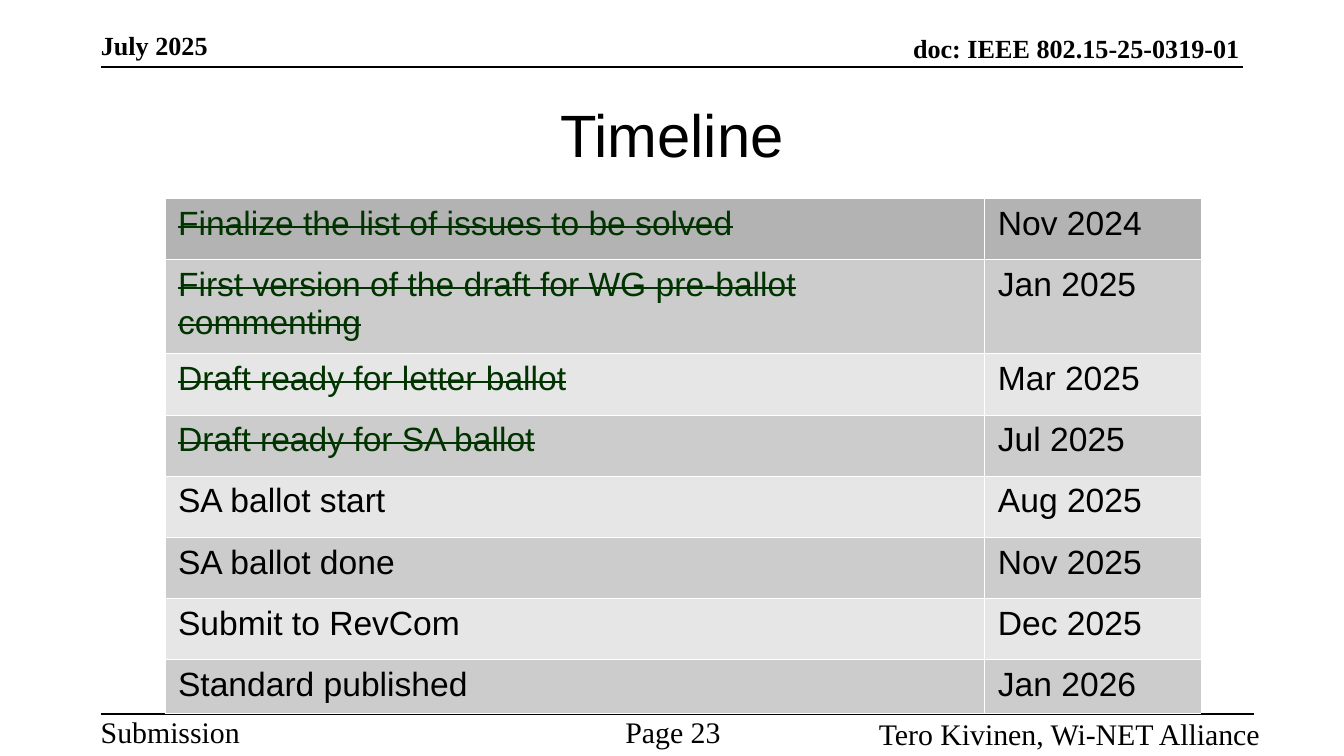
from copy import deepcopy
from lxml.etree import SubElement
from pptx import Presentation
from pptx.dml.color import RGBColor
from pptx.enum.shapes import MSO_CONNECTOR
from pptx.enum.text import MSO_ANCHOR, PP_ALIGN
from pptx.oxml.ns import qn
from pptx.util import Pt

PX = 4572  # 200 px to the inch
BLACK = RGBColor(0, 0, 0)
WHITE = RGBColor(0xFF, 0xFF, 0xFF)
GREEN = RGBColor(0, 0x33, 0)
HEAD = RGBColor(0xB3, 0xB3, 0xB3)
DARK = RGBColor(0xCC, 0xCC, 0xCC)
LIGHT = RGBColor(0xE6, 0xE6, 0xE6)
LEFT, MID, RIGHT = PP_ALIGN.LEFT, PP_ALIGN.CENTER, PP_ALIGN.RIGHT
TOP, CENTER, LOW = MSO_ANCHOR.TOP, MSO_ANCHOR.MIDDLE, MSO_ANCHOR.BOTTOM


def write(frame, text, color, form):
    """Add a run and give the paragraph end the same font."""
    para = frame.paragraphs[0]
    run = para.add_run()
    run.text = text
    run.font.color.rgb = color
    for key, value in form.items():
        setattr(run.font, key, value)
    end = deepcopy(run.font._element)
    end.tag = qn("a:endParaRPr")
    para._p.append(end)
    return run


def border(cell):
    """Draw a white hairline on all four sides of a cell."""
    props = cell._tc.get_or_add_tcPr()
    for i, side in enumerate(("lnL", "lnR", "lnT", "lnB")):
        line = SubElement(props, qn("a:" + side), w="762")
        fill = SubElement(line, qn("a:solidFill"))
        SubElement(fill, qn("a:srgbClr"), val=str(WHITE))
        props.remove(line)
        props.insert(i, line)


deck = Presentation()
deck.slide_width, deck.slide_height = 2000 * PX, 1125 * PX
slide = deck.slides.add_slide(deck.slide_layouts[6])
shapes = slide.shapes

# Rules above and below the content
for y, end in ((100, 1850), (1063, 1866)):
    rule = shapes.add_connector(
        MSO_CONNECTOR.STRAIGHT, 150 * PX, y * PX, end * PX, y * PX)
    rule.line.color.rgb = BLACK
    rule.line.width = Pt(1)
    SubElement(rule._element.spPr, qn("a:effectLst"))

# Header, footer and title
header = {"name": "Times New Roman", "size": Pt(14), "bold": True}
footer = {"name": "Times New Roman", "size": Pt(16)}
title = {"name": "Arial", "size": Pt(32)}
labels = (
    ("July 2025", (150, 60, 558, 30), LEFT, LOW, header),
    ("doc: IEEE 802.15-25-0319-01", (677, 65, 1168, 30), RIGHT, LOW, header),
    ("Submission", (150, 1062, 374, 46), LEFT, TOP, footer),
    ("Page 23 ", (820, 1062, 374, 46), MID, TOP, footer),
    ("Tero Kivinen, Wi-NET Alliance", (1141, 1065, 734, 46), RIGHT, TOP,
     footer),
    ("Timeline", (100, 96, 1800, 206), MID, CENTER, title),
)
for text, place, align, anchor, form in labels:
    frame = shapes.add_textbox(*(n * PX for n in place)).text_frame
    layout = {"word_wrap": True, "vertical_anchor": anchor, "margin_left": 0,
              "margin_right": 0, "margin_top": 0, "margin_bottom": 0}
    for key, value in layout.items():
        setattr(frame, key, value)
    frame.paragraphs[0].alignment = align
    write(frame, text, BLACK, form)

# Timeline table: finished steps are green and struck through
steps = (
    ("Finalize the list of issues to be solved", "Nov 2024", 91),
    ("First version of the draft for WG pre-ballot commenting", "Jan 2025",
     131),
    ("Draft ready for letter ballot", "Mar 2025", 91),
    ("Draft ready for SA ballot", "Jul 2025", 91),
    ("SA ballot start", "Aug 2025", 91),
    ("SA ballot done", "Nov 2025", 91),
    ("Submit to RevCom", "Dec 2025", 91),
    ("Standard published", "Jan 2026", 76),
)
DONE = 4
body = {"name": "Arial", "size": Pt(18)}
table = shapes.add_table(
    len(steps), 2, 245 * PX, 295 * PX, 1542 * PX, 753 * PX).table
table.first_row = table.horz_banding = False
for column, width in zip(table.columns, (1220, 322)):
    column.width = width * PX

for r, (step, date, height) in enumerate(steps):
    table.rows[r].height = height * PX
    shade = HEAD if r == 0 else (LIGHT, DARK)[r % 2]
    for c, text in enumerate((step, date)):
        cell = table.cell(r, c)
        cell.fill.solid()
        cell.fill.fore_color.rgb = shade
        border(cell)
        struck = c == 0 and r < DONE
        run = write(cell.text_frame, text, GREEN if struck else BLACK, body)
        if struck:
            run.font._element.set("strike", "sngStrike")

deck.save("out.pptx")
